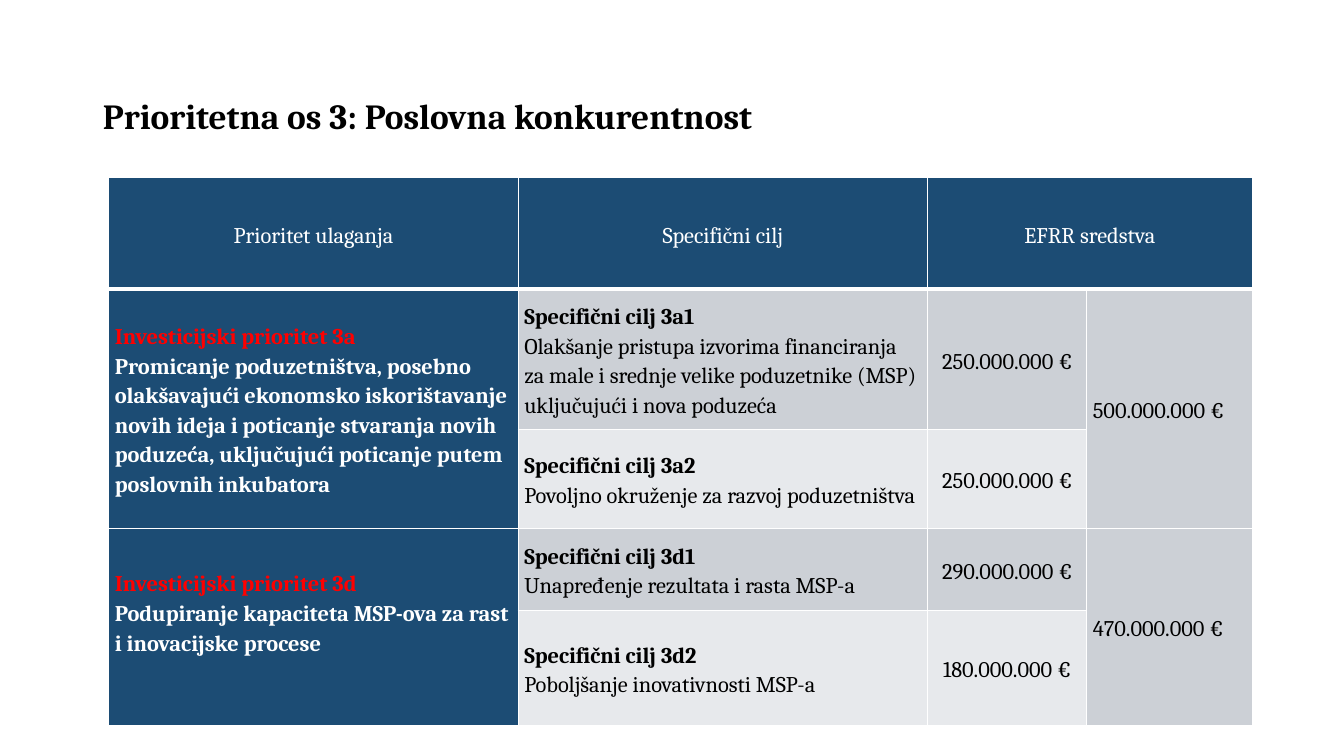
from pptx import Presentation
from pptx.dml.color import RGBColor
from pptx.enum.text import MSO_ANCHOR, PP_ALIGN
from pptx.oxml import parse_xml
from pptx.oxml.ns import nsdecls
from pptx.util import Emu, Pt

FONT = "Cambria"
NAVY, GREY, PALE = "1C4C74", "CCD0D6", "E7E9EC"
WHITE, BLACK, RED = "FFFFFF", "000000", "FF0000"
COLS = [406, 406, 158, 164]
ROWS = [111, 139, 98, 82, 114]

HEADS = ["Prioritet ulaganja", "Specifični cilj", "EFRR sredstva"]
# Each priority: heading, text, total, bottom margin, goals
GROUPS = [
    ("Investicijski prioritet 3a",
     "Promicanje poduzetništva, posebno olakšavajući ekonomsko iskorištavanje "
     "novih ideja i poticanje stvaranja novih poduzeća, uključujući poticanje "
     "putem poslovnih inkubatora",
     "500.000.000 €", 0,
     [("Specifični cilj 3a1",
       "Olakšanje pristupa izvorima financiranja za male i srednje velike "
       "poduzetnike (MSP) uključujući i nova poduzeća", "250.000.000 €"),
      ("Specifični cilj 3a2",
       "Povoljno okruženje za razvoj poduzetništva", "250.000.000 €")]),
    ("Investicijski prioritet 3d",
     "Podupiranje kapaciteta MSP-ova za rast i inovacijske procese",
     "470.000.000 €", 30,
     [("Specifični cilj 3d1",
       "Unapređenje rezultata i rasta MSP-a", "290.000.000 €"),
      ("Specifični cilj 3d2",
       "Poboljšanje inovativnosti MSP-a", "180.000.000 €")]),
]


def px(num):
    return Emu(num * 9144)


def rgb(code):
    return RGBColor.from_string(code)


def style(para, size, color, bold):
    font = para.font
    font.name, font.size, font.bold = FONT, Pt(size), bold
    font.color.rgb = rgb(color)


def add_title(slide, text):
    title = slide.shapes.title
    title.left, title.top, title.width, title.height = map(px, (92, 45, 1150, 145))
    frame = title.text_frame
    frame.text = text
    frame.word_wrap = True
    frame.vertical_anchor = MSO_ANCHOR.MIDDLE
    para = frame.paragraphs[0]
    para.alignment, para.line_spacing = PP_ALIGN.LEFT, 0.9
    style(para, 25.2, BLACK, True)


def set_line(cell, side, width):
    cell._tc.get_or_add_tcPr().append(parse_xml(
        f'<a:ln{side} {nsdecls("a")} w="{Pt(width)}"><a:solidFill>'
        f'<a:srgbClr val="{WHITE}"/></a:solidFill></a:ln{side}>'))


def paint(cell, row, fill):
    # Borders come before the fill; the rule under the header is thick
    for side in "LRTB":
        thick = (row, side) in ((0, "B"), (1, "T"))
        set_line(cell, side, 3 if thick else 1)
    cell.fill.solid()
    cell.fill.fore_color.rgb = rgb(fill)


def write(cell, lines, align=PP_ALIGN.LEFT, side=6, low=0):
    cell.vertical_anchor = MSO_ANCHOR.MIDDLE
    cell.margin_left = cell.margin_right = px(side)
    cell.margin_top, cell.margin_bottom = px(1), px(low)
    frame = cell.text_frame
    frame.text = "\n".join(text for text, _, _ in lines)
    for para, (_, color, bold) in zip(frame.paragraphs, lines):
        para.alignment, para.line_spacing = align, 1.15
        style(para, 16, color, bold)


def add_grid(slide):
    shape = slide.shapes.add_table(len(ROWS), len(COLS), px(108), px(176),
                                   px(sum(COLS)), px(sum(ROWS)))
    table = shape.table
    for col, width in zip(table.columns, COLS):
        col.width = px(width)
    for line, height in zip(table.rows, ROWS):
        line.height = px(height)

    # Fills and borders
    for row in range(len(ROWS)):
        for col in range(len(COLS)):
            if row == 0 or col == 0:
                fill = NAVY
            else:
                fill = GREY if row % 2 or col == 3 else PALE
            paint(table.cell(row, col), row, fill)

    # Header
    table.cell(0, 2).merge(table.cell(0, 3))
    for col, head in enumerate(HEADS):
        write(table.cell(0, col), [(head, WHITE, False)], PP_ALIGN.CENTER, 5)

    # Priorities with their goals
    for num, (head, text, total, low, goals) in enumerate(GROUPS):
        top = 1 + 2 * num
        for col in (0, 3):
            table.cell(top, col).merge(table.cell(top + 1, col))
        write(table.cell(top, 0), [(head, RED, True), (text, WHITE, True)], low=low)
        write(table.cell(top, 3), [(total, BLACK, False)])
        for row, (name, goal, funds) in enumerate(goals, top):
            write(table.cell(row, 1), [(name, BLACK, True), (goal, BLACK, False)])
            write(table.cell(row, 2), [(funds, BLACK, False)], PP_ALIGN.CENTER)


def main():
    deck = Presentation()
    deck.slide_width, deck.slide_height = px(1333), px(750)
    slide = deck.slides.add_slide(deck.slide_layouts[5])
    add_title(slide, "Prioritetna os 3: Poslovna konkurentnost")
    add_grid(slide)
    deck.save("out.pptx")


if __name__ == "__main__":
    main()
